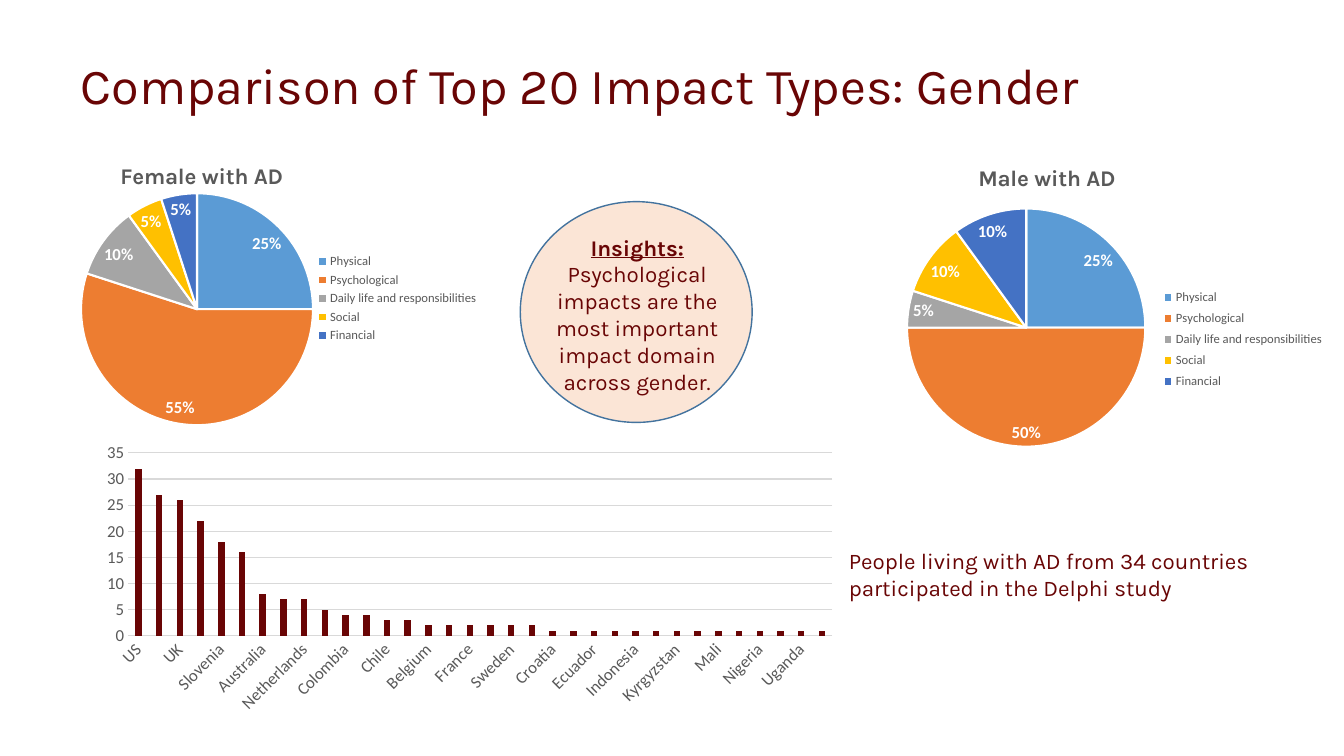
from lxml import etree
from pptx import Presentation
from pptx import util as u
from pptx.chart import data as chart_data
from pptx.dml.color import RGBColor
from pptx.enum import chart as charts, shapes, text
from pptx.oxml import ns

MAROON = RGBColor(0x69, 0x05, 0x05)
GREY = RGBColor(0x59, 0x59, 0x59)
RULE = RGBColor(0xD9, 0xD9, 0xD9)
WHITE = RGBColor(0xFF, 0xFF, 0xFF)
PEACH = RGBColor(0xFB, 0xE5, 0xD6)
OUTLINE = RGBColor(0x43, 0x73, 0x9E)
SLICES = [RGBColor(0x5B, 0x9B, 0xD5), RGBColor(0xED, 0x7D, 0x31), RGBColor(0xA5, 0xA5, 0xA5),
          RGBColor(0xFF, 0xC0, 0x00), RGBColor(0x44, 0x72, 0xC4)]

IMPACTS = ["Physical", "Psychological", "Daily life and responsibilities", "Social", "Financial"]
COUNTRIES = [
    "US", "Portugal", "UK", "Spain", "Slovenia", "Argentina", "Australia", "Germany",
    "Netherlands", "Mexico", "Colombia", "New Zealand", "Chile", "Serbia", "Belgium",
    "Canada", "France", "Ireland", "Sweden", "Venezuela", "Croatia", "Czech Republic",
    "Ecuador", "India", "Indonesia", "Kenya", "Kyrgyzstan", "Lebanon", "Mali",
    "Nicaragua", "Nigeria", "Panama", "Uganda", "Uruguay"]
PEOPLE = [32, 27, 26, 22, 18, 16, 8, 7, 7, 5, 4, 4, 3, 3] + [2] * 6 + [1] * 14


def apply(target, **values):
    for name, value in values.items():
        setattr(target, name, value)


def style_font(font, size, color, **extra):
    apply(font, **{"name": "Calibri", "size": u.Pt(size), **extra})
    font.color.rgb = color


def place(part, index, inner=False, **shares):
    """Give a chart part a fixed layout, in shares of the chart."""
    for old in part.findall(ns.qn("c:layout")):
        part.remove(old)
    layout = etree.Element(ns.qn("c:layout"))
    manual = etree.SubElement(layout, ns.qn("c:manualLayout"))
    settings = {"layoutTarget": "inner"} if inner else {}
    settings.update(xMode="edge", yMode="edge", **shares)
    for name, value in settings.items():
        etree.SubElement(manual, ns.qn("c:" + name)).set("val", str(value))
    part.insert(index, layout)


class Slide:
    """Places elements on a grid of 100 columns and 100 rows."""

    def __init__(self, deck):
        self.deck = deck
        self.page = deck.slides.add_slide(deck.slide_layouts[5])

    def area(self, left, top, width, height):
        column, row = self.deck.slide_width / 100, self.deck.slide_height / 100
        return [u.Emu(round(n)) for n in (left * column, top * row, width * column, height * row)]

    def add_span(self, para, words, size, **extra):
        span = para.add_run()
        span.text = words
        style_font(span.font, size, MAROON, name="Karla", **extra)

    def title(self, words, *area):
        box = self.page.shapes.title
        apply(box, **dict(zip(("left", "top", "width", "height"), self.area(*area))))
        apply(box.text_frame, vertical_anchor=text.MSO_ANCHOR.MIDDLE, word_wrap=True)
        para = box.text_frame.paragraphs[0]
        apply(para, alignment=text.PP_ALIGN.LEFT, line_spacing=0.9)
        self.add_span(para, words, 36)

    def text(self, spans, align, *area):
        box = self.page.shapes.add_textbox(*self.area(*area))
        apply(box.text_frame, word_wrap=True, auto_size=text.MSO_AUTO_SIZE.SHAPE_TO_FIT_TEXT)
        para = box.text_frame.paragraphs[0]
        para.alignment = align
        for words, extra in spans:
            self.add_span(para, words, 16, **extra)

    def circle(self, *area):
        disc = self.page.shapes.add_shape(shapes.MSO_SHAPE.FLOWCHART_CONNECTOR, *self.area(*area))
        disc.shadow.inherit = False
        disc.fill.solid()
        disc.fill.fore_color.rgb = PEACH
        disc.line.color.rgb = OUTLINE
        disc.line.width = u.Pt(1)

    def chart(self, kind, names, values, area, plot):
        data = chart_data.CategoryChartData()
        data.categories = names
        data.add_series("Series 1", values)
        chart = self.page.shapes.add_chart(kind, *self.area(*area), data).chart
        place(chart.element.xpath("c:chart/c:plotArea")[0], 0, True, **dict(zip("xywh", plot)))
        return chart

    def pie(self, heading, values, area, plot, heading_at, legend_at):
        chart = self.chart(charts.XL_CHART_TYPE.PIE, IMPACTS, values, area, plot)
        # Heading
        chart.has_title = True
        frame = chart.chart_title.text_frame
        frame.text = heading
        style_font(frame.paragraphs[0].runs[0].font, 16, GREY, name="Karla", bold=True)
        place(chart.element.xpath("c:chart/c:title")[0], 1, **dict(zip("xy", heading_at)))
        # Legend
        chart.has_legend = True
        apply(chart.legend, position=charts.XL_LEGEND_POSITION.RIGHT, include_in_layout=False)
        style_font(chart.legend.font, 9, GREY)
        place(chart.element.xpath("c:chart/c:legend")[0], 1, **dict(zip("xywh", legend_at)))
        # Slices and their labels
        pie = chart.plots[0]
        for index, color in enumerate(SLICES):
            look = pie.series[0].points[index].format
            look.fill.solid()
            look.fill.fore_color.rgb = color
            look.line.color.rgb = WHITE
            look.line.width = u.Pt(1.5)
        pie.has_data_labels = True
        apply(pie.data_labels, show_value=True, show_percentage=False, number_format="0%",
              number_format_is_linked=False, position=charts.XL_LABEL_POSITION.BEST_FIT)
        style_font(pie.data_labels.font, 12, WHITE, bold=True)

    def bars(self, names, values, area, plot):
        chart = self.chart(charts.XL_CHART_TYPE.COLUMN_CLUSTERED, names, values, area, plot)
        apply(chart, has_title=False, has_legend=False)
        apply(chart.plots[0], gap_width=219, overlap=-27, vary_by_categories=False)
        fill = chart.plots[0].series[0].format.fill
        fill.solid()
        fill.fore_color.rgb = MAROON
        # Axes
        for axis in (chart.category_axis, chart.value_axis):
            apply(axis, major_tick_mark=charts.XL_TICK_MARK.NONE,
                  minor_tick_mark=charts.XL_TICK_MARK.NONE)
            style_font(axis.tick_labels.font, 12, GREY)
        names_axis, count_axis = chart.category_axis, chart.value_axis
        label_body = chart.element.xpath("c:chart/c:plotArea/c:catAx/c:txPr/a:bodyPr")[0]
        label_body.set("rot", "-2700000")
        apply(count_axis, minimum_scale=0, maximum_scale=35, major_unit=5, has_major_gridlines=True)
        count_axis.format.line.fill.background()
        for line in (names_axis.format.line, count_axis.major_gridlines.format.line):
            line.color.rgb = RULE
            line.width = u.Pt(0.75)


def main():
    deck = Presentation()
    deck.slide_width, deck.slide_height = u.Inches(13.33), u.Inches(7.5)
    slide = Slide(deck)

    # Charts
    slide.bars(COUNTRIES, PEOPLE, (6.15, 51.2, 56.34, 48.4), (0.06, 0.18, 0.93, 0.5))
    slide.pie("Male with AD", [0.25, 0.5, 0.05, 0.1, 0.1], (54.31, 17.47, 45.46, 52.8),
              (0.29, 0.19, 0.39, 0.6), (0.4, 0.07), (0.69, 0.38, 0.3, 0.28))
    slide.title("Comparison of Top 20 Impact Types: Gender", 5.25, 1.73, 87.85, 19.87)
    slide.pie("Female with AD", [0.25, 0.55, 0.1, 0.05, 0.05], (-8.25, 16.13, 44.49, 47.2),
              (0.32, 0.2, 0.39, 0.65), (0.38, 0.1), (0.71, 0.36, 0.28, 0.27))

    # Study note and insights
    slide.text([("People living with AD from 34 countries participated in the Delphi study", {})],
               text.PP_ALIGN.LEFT, 62.42, 71.73, 35.41, 8.53)
    slide.circle(38.71, 26.67, 17.25, 29.2)
    slide.text([("Insights: ", {"bold": True, "underline": True}),
                ("Psychological impacts are the most important impact domain across gender.", {})],
               text.PP_ALIGN.CENTER, 38.71, 30.27, 17.4, 22.93)

    deck.save("out.pptx")


if __name__ == "__main__":
    main()
